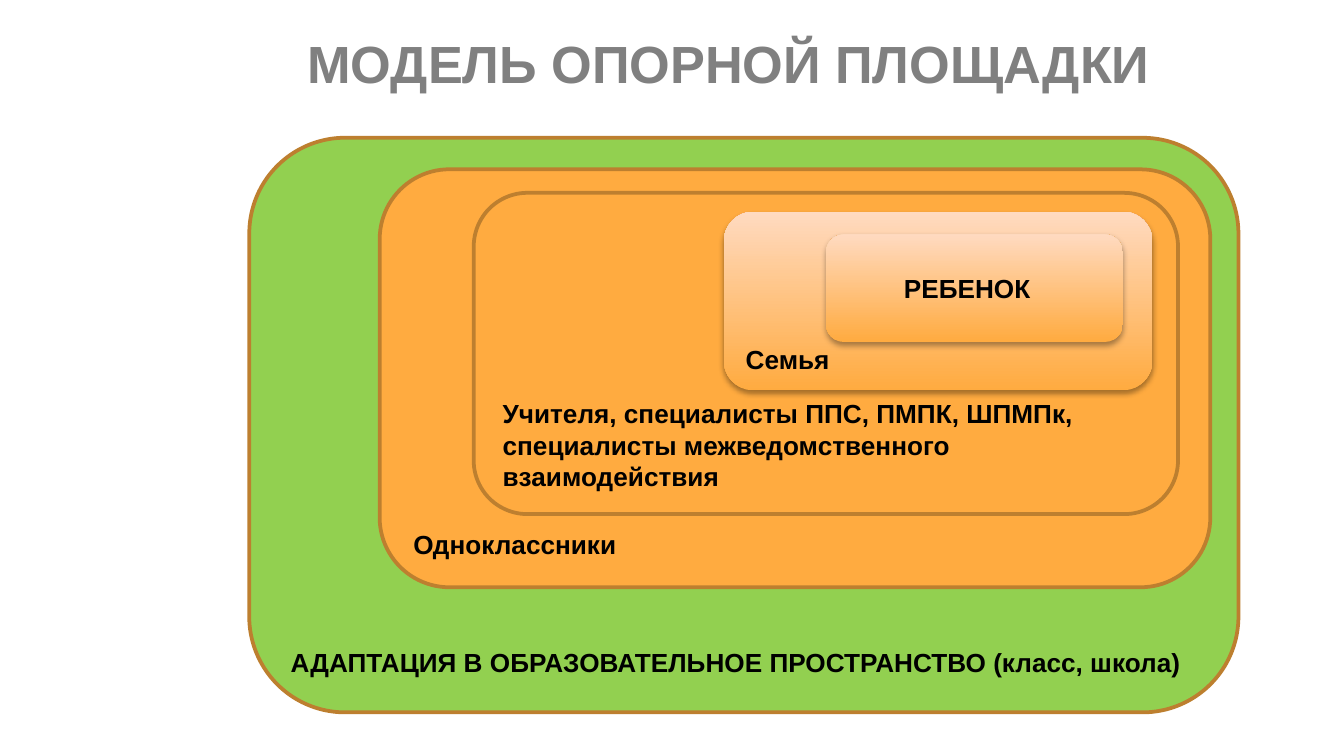
from dataclasses import dataclass

from lxml import etree
from pptx import Presentation
from pptx import util as u
from pptx.dml.color import RGBColor
from pptx.enum import shapes, text
from pptx.oxml.ns import qn

PX = 4572
ORANGE, PEACH, GREEN, BROWN = "FFAB40", "FFDAC0", "92D050", "BD7F2F"
BLACK, GRAY = "000000", "808080"


@dataclass
class Layer:
    label: str
    left: int
    top: int
    width: int
    height: int
    fill: str = ""
    centered: bool = False
    right_inset: int = 20


LAYERS = [
    Layer("АДАПТАЦИЯ В ОБРАЗОВАТЕЛЬНОЕ ПРОСТРАНСТВО (класс, школа)", 371, 205, 1472, 855, GREEN),
    Layer("Одноклассники", 565, 252, 1236, 622, ORANGE),
    Layer("Учителя, специалисты ППС, ПМПК, ШПМПк, специалисты межведомственного взаимодействия",
          705, 287, 1048, 478, ORANGE),
    Layer("Семья", 1077, 315, 638, 266),
    Layer("РЕБЕНОК", 1229, 349, 442, 160, centered=True, right_inset=41),
]


def px(n: int) -> u.Emu:
    return u.Emu(n * PX)


def color(value: str) -> RGBColor:
    return RGBColor.from_string(value)


def write(tf, content: str, size: int, hue: str, align) -> None:
    tf.word_wrap = True
    p = tf.paragraphs[0]
    p.alignment = align
    r = p.add_run()
    r.text = content
    r.font.name = "Arial"
    r.font.size = u.Pt(size)
    r.font.bold = True
    r.font.color.rgb = color(hue)


def add_soft_shadow(sp) -> None:
    effects = sp._element.spPr.find(qn("a:effectLst"))
    shadow = etree.SubElement(effects, qn("a:outerShdw"), blurRad=str(u.Pt(3.1)),
                              dist=str(u.Pt(1.8)), dir="5400000", rotWithShape="0")
    hue = etree.SubElement(shadow, qn("a:srgbClr"), val=BLACK)
    etree.SubElement(hue, qn("a:alpha"), val="35000")


def add_layer(s, layer: Layer) -> None:
    sp = s.shapes.add_shape(shapes.MSO_SHAPE.ROUNDED_RECTANGLE, px(layer.left),
                            px(layer.top), px(layer.width), px(layer.height))
    sp.shadow.inherit = False
    if layer.fill:
        sp.fill.solid()
        sp.fill.fore_color.rgb = color(layer.fill)
        sp.line.color.rgb = color(BROWN)
        sp.line.width = u.Pt(2)
    else:
        sp.fill.gradient()
        sp.fill.gradient_angle = 90
        for stop, hue in zip(sp.fill.gradient_stops, (ORANGE, PEACH)):
            stop.color.rgb = color(hue)
        sp.line.fill.background()
        add_soft_shadow(sp)
    tf = sp.text_frame
    tf.margin_right = px(layer.right_inset)
    tf.vertical_anchor = text.MSO_ANCHOR.MIDDLE if layer.centered else text.MSO_ANCHOR.BOTTOM
    align = text.PP_ALIGN.CENTER if layer.centered else text.PP_ALIGN.LEFT
    write(tf, layer.label, 14, BLACK, align)


def add_title(s, content: str) -> None:
    tf = s.shapes.add_textbox(px(297), px(26), px(1574), px(126)).text_frame
    tf.margin_left = tf.margin_top = tf.margin_right = tf.margin_bottom = px(20)
    write(tf, content, 28, GRAY, text.PP_ALIGN.CENTER)


def main() -> None:
    prs = Presentation()
    prs.slide_width, prs.slide_height = px(2000), px(1125)
    s = prs.slides.add_slide(prs.slide_layouts[6])
    for layer in LAYERS:
        add_layer(s, layer)
    add_title(s, "МОДЕЛЬ ОПОРНОЙ ПЛОЩАДКИ")
    prs.save("out.pptx")


if __name__ == "__main__":
    main()
